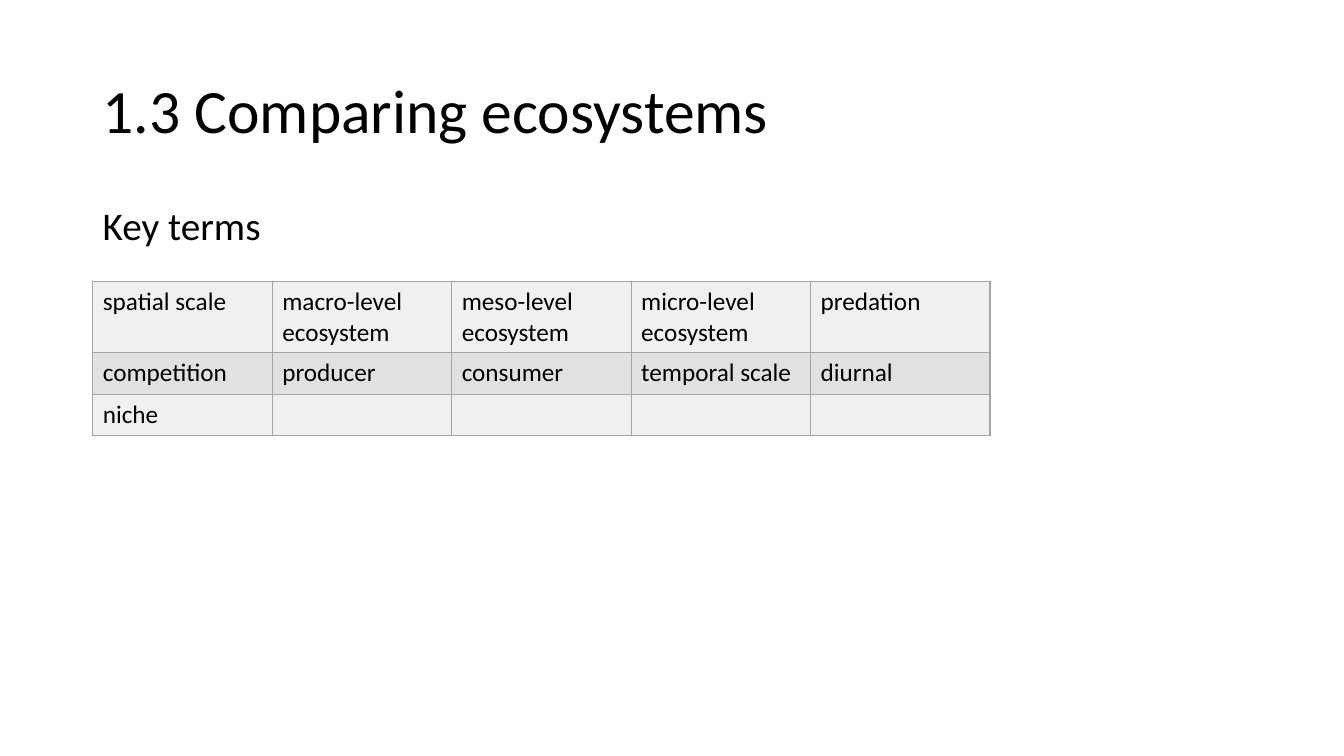
from pptx import Presentation, util as u
from pptx.dml.color import RGBColor
from pptx.enum import text
from pptx.oxml import parse_xml
from pptx.oxml.ns import nsdecls

BLACK = RGBColor(0x00, 0x00, 0x00)
WHITE = RGBColor(0xFF, 0xFF, 0xFF)
BORDER = RGBColor(0xA5, 0xA5, 0xA5)
BANDS = [RGBColor(0xF0, 0xF0, 0xF0), RGBColor(0xE1, 0xE1, 0xE1)]

WIDTH, HEIGHT = u.Inches(13.33), u.Inches(7.5)
MARGIN = u.Inches(0.92)
COLUMN = u.Inches(1.78)
ROW = u.Inches(0.41)

KEY_TERMS = [
    ["spatial scale", "macro-level\necosystem", "meso-level\necosystem",
     "micro-level\necosystem", "predation"],
    ["competition", "producer", "consumer", "temporal scale", "diurnal"],
    ["niche", "", "", "", ""],
]


def apply(target, values):
    for name, value in values.items():
        setattr(target, name, value)


def style_font(font, size):
    apply(font, {"name": "Calibri", "size": u.Pt(size), "bold": False})
    font.color.rgb = BLACK


def add_heading(slide, wording, top, height, size, anchor, space_before):
    heading = slide.shapes.add_textbox(MARGIN, top, WIDTH - 2 * MARGIN, height)
    apply(heading.text_frame, {"word_wrap": True, "vertical_anchor": anchor, "text": wording})
    paragraph = heading.text_frame.paragraphs[0]
    apply(paragraph, {"line_spacing": 0.9, "space_before": u.Pt(space_before)})
    style_font(paragraph.font, size)


def add_borders(cell):
    properties = cell._tc.get_or_add_tcPr()
    for position, side in enumerate(("lnL", "lnR", "lnT", "lnB")):
        properties.insert(position, parse_xml(
            f'<a:{side} {nsdecls("a")} w="{u.Pt(1)}"><a:solidFill>'
            f'<a:srgbClr val="{BORDER}"/></a:solidFill></a:{side}>'))


def fill_cell(cell, term, band):
    cell.text = term
    for paragraph in cell.text_frame.paragraphs:
        style_font(paragraph.font, 18)
    cell.fill.solid()
    cell.fill.fore_color.rgb = band
    add_borders(cell)


def add_terms(slide, terms, top):
    rows, columns = len(terms), len(terms[0])
    grid = slide.shapes.add_table(
        rows, columns, MARGIN, top, columns * COLUMN, rows * ROW).table
    apply(grid, {"first_row": False, "horz_banding": False})
    for column in grid.columns:
        column.width = COLUMN
    for r, row_terms in enumerate(terms):
        lines = max(term.count("\n") for term in row_terms) + 1
        grid.rows[r].height = ROW + (lines - 1) * u.Inches(0.3)
        for c, term in enumerate(row_terms):
            fill_cell(grid.cell(r, c), term, BANDS[r % 2])


def main():
    deck = Presentation()
    apply(deck, {"slide_width": WIDTH, "slide_height": HEIGHT})
    slide = deck.slides.add_slide(deck.slide_layouts[6])
    slide.background.fill.solid()
    slide.background.fill.fore_color.rgb = WHITE
    add_heading(slide, "1.3 Comparing ecosystems", u.Inches(0.4), u.Inches(1.45),
                44, text.MSO_ANCHOR.MIDDLE, 0)
    add_heading(slide, "Key terms", u.Inches(2), u.Inches(4.76),
                28, text.MSO_ANCHOR.TOP, 10)
    add_terms(slide, KEY_TERMS, u.Inches(2.79))
    deck.save("out.pptx")


if __name__ == "__main__":
    main()
